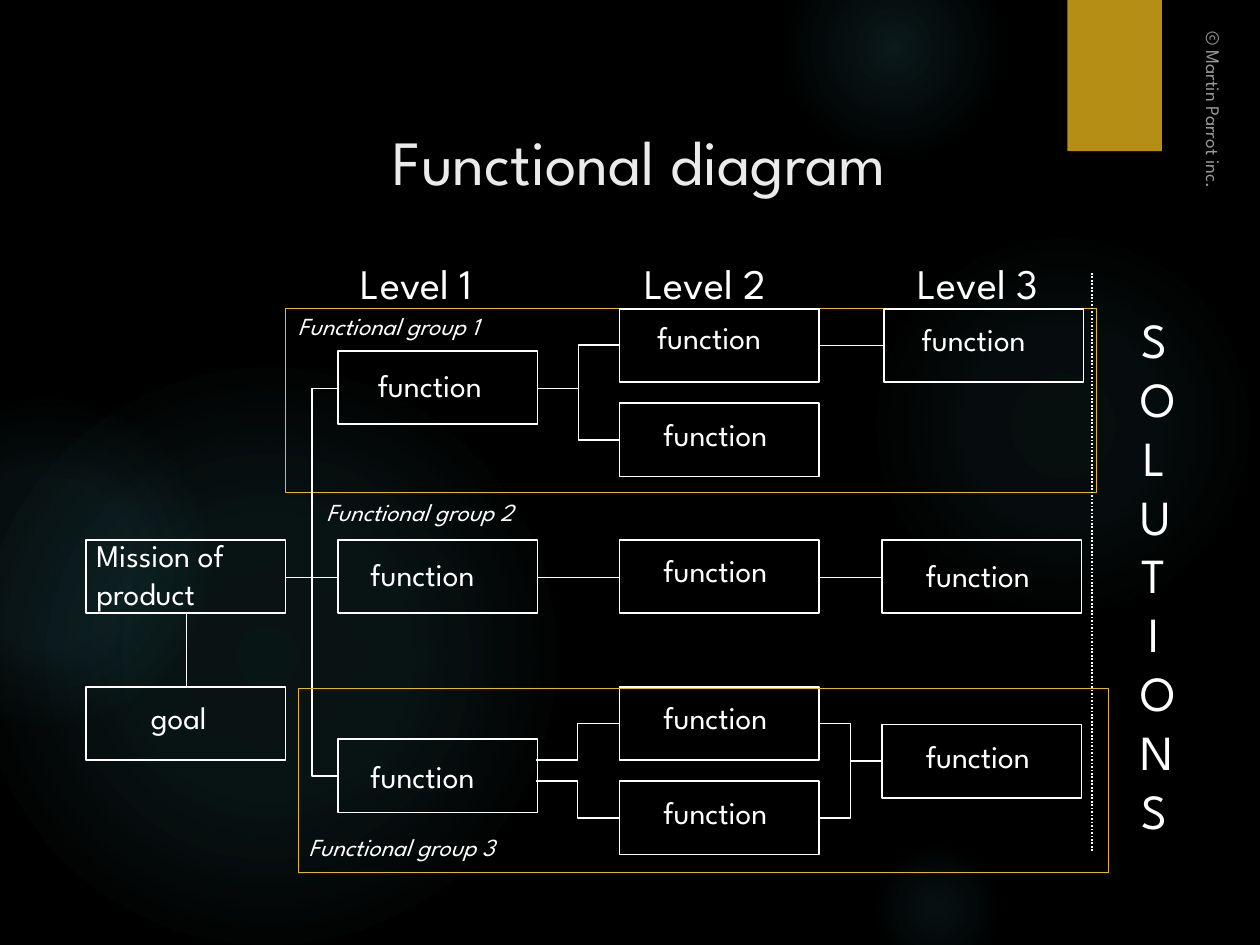
from dataclasses import dataclass

from pptx import Presentation
from pptx.dml.color import RGBColor
from pptx.enum.dml import MSO_LINE
from pptx.enum.shapes import MSO_CONNECTOR, MSO_SHAPE
from pptx.enum.text import MSO_ANCHOR, PP_ALIGN
from pptx.oxml import parse_xml
from pptx.oxml.ns import nsdecls, qn
from pptx.util import Inches, Pt


@dataclass(frozen=True)
class Theme:
    """Colours, font and type sizes of the slide."""

    font: str = "League Spartan"
    background: str = "000000"
    text: str = "FFFFFF"
    title: str = "EBEBEB"
    muted: str = "999999"
    accent: str = "E6B729"
    bar: str = "B58E15"
    glow: str = "50B9C1"
    title_size: int = 36
    letter_size: int = 28
    level_size: int = 24
    body_size: int = 18
    group_size: int = 14
    credit_size: int = 11


class Diagram:
    """Draws elements on a grid of 120 columns by 90 rows."""

    box_size = (19, 7)
    group_size = (77.2, 17.5)

    def __init__(self, presentation, theme):
        """Add a title-only slide with the theme's background."""
        self.theme = theme
        self.presentation = presentation
        self.slide = presentation.slides.add_slide(presentation.slide_layouts[5])
        fill = self.slide.background.fill
        fill.solid()
        fill.fore_color.rgb = RGBColor.from_string(theme.background)

    def across(self, columns):
        """Convert columns to a length."""
        return round(self.presentation.slide_width * columns / 120)

    def down(self, rows):
        """Convert rows to a length."""
        return round(self.presentation.slide_height * rows / 90)

    def frame(self, column, row, columns, rows):
        """Convert a grid area to left, top, width and height."""
        return self.across(column), self.down(row), self.across(columns), self.down(rows)

    def set_text(self, shape, text, size, color=None, align=PP_ALIGN.LEFT,
                 anchor=MSO_ANCHOR.TOP, italic=False):
        """Set the text of a shape, one paragraph for each line."""
        frame = shape.text_frame
        frame.word_wrap = True
        frame.vertical_anchor = anchor
        frame.text = text
        style = {"name": self.theme.font, "size": Pt(size), "italic": italic, "bold": False}
        for paragraph in frame.paragraphs:
            paragraph.alignment = align
            for run in paragraph.runs:
                for name, value in style.items():
                    setattr(run.font, name, value)
                run.font.color.rgb = RGBColor.from_string(color or self.theme.text)

    def title(self, area, text):
        """Place and fill the title placeholder."""
        shape = self.slide.shapes.title
        for name, value in zip(("left", "top", "width", "height"), self.frame(*area)):
            setattr(shape, name, value)
        self.set_text(shape, text, self.theme.title_size, self.theme.title,
                      PP_ALIGN.CENTER, MSO_ANCHOR.MIDDLE)

    def label(self, area, text, size, **style):
        """Add a text box."""
        shape = self.slide.shapes.add_textbox(*self.frame(*area))
        self.set_text(shape, text, size, **style)
        return shape

    def shape(self, kind, area, fill=None, line=None, width=1):
        """Add a preset shape with an optional fill and outline."""
        shape = self.slide.shapes.add_shape(kind, *self.frame(*area))
        shape.shadow.inherit = False
        if fill:
            shape.fill.solid()
            shape.fill.fore_color.rgb = RGBColor.from_string(fill)
        else:
            shape.fill.background()
        if line:
            shape.line.color.rgb = RGBColor.from_string(line)
            shape.line.width = Pt(width)
        else:
            shape.line.fill.background()
        return shape

    def halo(self, column, row, diameter, stops):
        """Add a circle that fades out from its centre."""
        shape = self.shape(MSO_SHAPE.OVAL, (column, row, diameter, diameter), self.theme.glow)
        marks = "".join(
            f'<a:gs pos="{place * 1000}"><a:srgbClr val="{self.theme.glow}">'
            f'<a:alpha val="{alpha * 1000}"/></a:srgbClr></a:gs>'
            for place, alpha in stops)
        gradient = parse_xml(
            f'<a:gradFill {nsdecls("a")} rotWithShape="1"><a:gsLst>{marks}</a:gsLst>'
            '<a:path path="circle"><a:fillToRect l="50000" t="50000" r="50000" b="50000"/>'
            '</a:path></a:gradFill>')
        properties = shape.element.spPr
        properties.replace(properties.find(qn("a:solidFill")), gradient)

    def box(self, column, row, text, shift):
        """Add an outlined box and its label, shifted from the box corner."""
        self.shape(MSO_SHAPE.RECTANGLE, (column, row, *self.box_size), line=self.theme.text)
        area = (column + shift[0], row + shift[1], 16.3, 4.8)
        self.label(area, text, self.theme.body_size)

    def group(self, column, row):
        """Add the outline of a functional group."""
        self.shape(MSO_SHAPE.RECTANGLE, (column, row, *self.group_size),
                   line=self.theme.accent, width=0.75)

    def connect(self, start, end, dash=None):
        """Join two points, with a bend where they are not level."""
        level = start[0] == end[0] or start[1] == end[1]
        kind = MSO_CONNECTOR.STRAIGHT if level else MSO_CONNECTOR.ELBOW
        connector = self.slide.shapes.add_connector(
            kind, self.across(start[0]), self.down(start[1]),
            self.across(end[0]), self.down(end[1]))
        connector.line.color.rgb = RGBColor.from_string(self.theme.text)
        connector.line.width = Pt(1)
        if dash:
            connector.line.dash_style = dash
        connector.element.spPr.append(parse_xml(f'<a:effectLst {nsdecls("a")}/>'))


def main():
    """Build the functional diagram slide."""
    presentation = Presentation()
    presentation.slide_width, presentation.slide_height = Inches(10), Inches(7.5)
    theme = Theme()
    diagram = Diagram(presentation, theme)

    for halo in (
        (82.7, 22, 37, ((0, 7), (36, 6), (69, 0))),
        (74.6, -6, 21, ((0, 14), (36, 7), (73, 0))),
        (82.7, 80, 13, ((0, 9), (36, 5), (66, 0))),
        (-2, 35, 55, ((0, 11), (36, 10), (75, 0))),
        (-11, 38, 31, ((0, 8), (36, 8), (72, 0))),
    ):
        diagram.halo(*halo)
    diagram.shape(MSO_SHAPE.RECTANGLE, (101.65, 0, 9, 14.4), theme.bar)
    diagram.title((4.2, 11, 113.4, 8.5), "Functional diagram")

    diagram.group(27.2, 29.4)
    for column, row, shift in (
        (32.2, 33.4, (2.6, 0.9)), (32.2, 51.4, (1.9, 0.9)), (32.2, 70.4, (1.9, 1.1)),
        (59, 29.4, (2.4, 0.3)), (59, 38.4, (3, 0.5)), (59, 51.4, (3, 0.5)),
        (59, 65.4, (3, 0.5)), (59, 74.4, (3, 0.5)),
        (84.2, 29.4, (2.4, 0.5)), (84, 51.4, (3, 1)), (84, 69, (3, 0.6)),
    ):
        diagram.box(column, row, "function", shift)
    diagram.box(8.2, 51.4, "Mission of\nproduct", (-0.2, -0.9))
    diagram.box(8.2, 65.4, "goal", (5, 0.5))

    for start, *ends in (
        ((27.2, 55), (32.2, 55), (32.2, 37), (32.2, 73.9)),
        ((51.2, 37), (59, 32.9), (59, 41.9)),
        ((78, 32.9), (84.2, 32.9)),
        ((51.2, 55), (59, 55)),
        ((78, 55), (84, 55)),
        ((51, 72.4), (59, 68.9)),
        ((51, 74.4), (59, 77.9)),
        ((78, 68.9), (84, 72.5)),
        ((78, 77.9), (84, 72.5)),
        ((17.75, 58.4), (17.75, 65.4)),
    ):
        for end in ends:
            diagram.connect(start, end)
    diagram.connect((104, 26), (104, 81), MSO_LINE.ROUND_DOT)

    for number, (column, row) in enumerate(((27.2, 29), (29.9, 46.7), (28.2, 78.7)), 1):
        diagram.label((column, row, 26.1, 4.1), f"Functional group {number}",
                      theme.group_size, italic=True)
    for number, column in enumerate((33.2, 60.2, 86.2), 1):
        diagram.label((column, 23.9, 16, 6), f"Level {number}", theme.level_size)
    diagram.label((107.4, 28.9, 5, 52.1), "SOLUTIONS", theme.letter_size,
                  align=PP_ALIGN.CENTER)
    copyright_line = diagram.label((90.1, 25.6, 50.6, 3), "© Martin Parrot inc.",
                                   theme.credit_size, color=theme.muted,
                                   anchor=MSO_ANCHOR.BOTTOM)
    copyright_line.rotation = 90
    diagram.group(28.4, 65.6)

    presentation.save("out.pptx")


if __name__ == "__main__":
    main()
